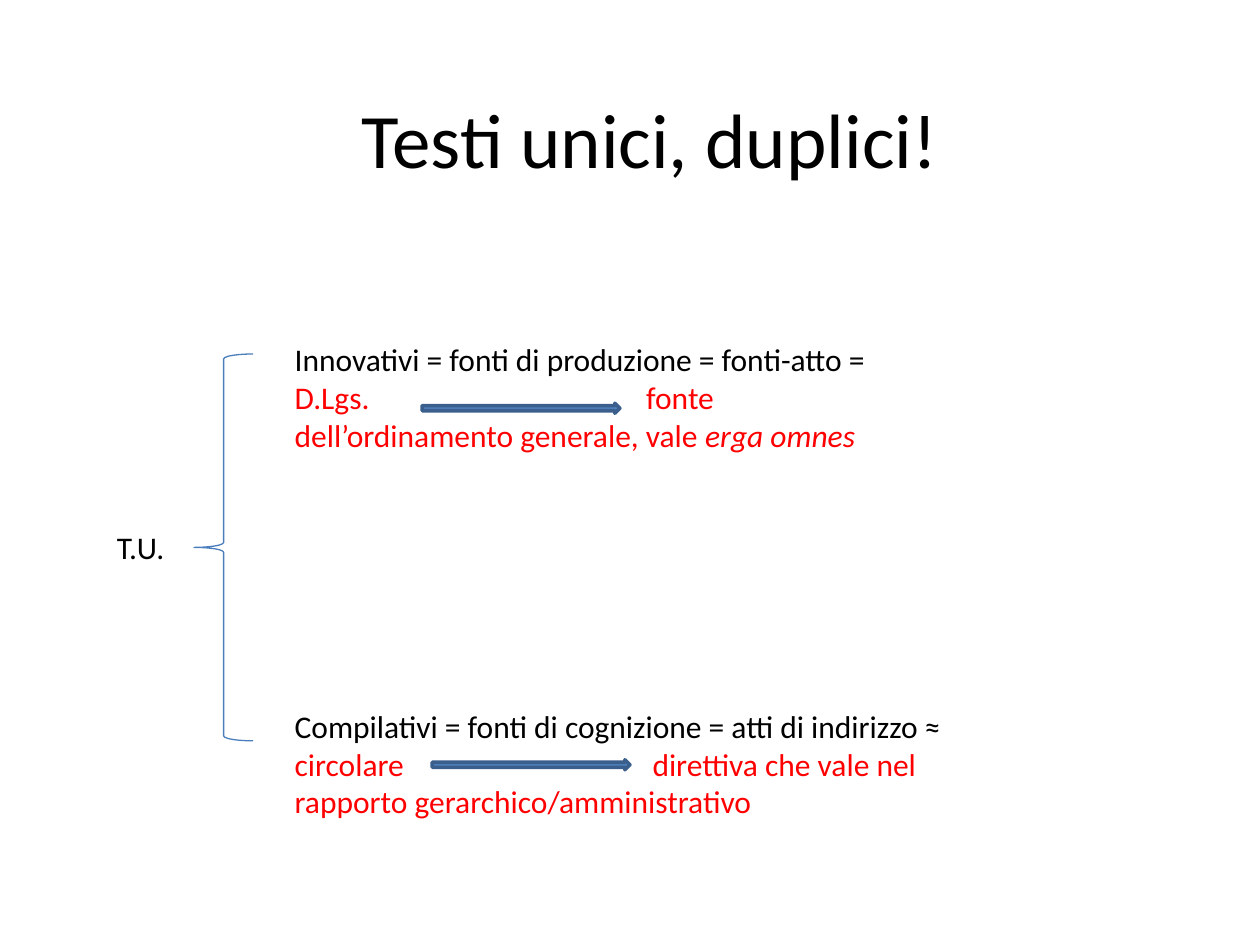
from pptx import Presentation
from pptx.dml.color import RGBColor
from pptx.enum.shapes import MSO_SHAPE
from pptx.enum.text import MSO_ANCHOR, PP_ALIGN
from pptx.util import Inches, Pt
from lxml.etree import SubElement
from pptx.oxml.ns import qn

COLS, ROWS = 100, 75
CELL = Inches(10) / COLS
BLACK, RED = "000000", "FF0000"
BLUE, NAVY, SKY = "4F81BD", "3A5F8C", "4B7EBC"


def paint(color, code):
    color.rgb = RGBColor.from_string(code)


def place(*cells):
    return [round(cell * CELL) for cell in cells]


def add_text(slide, box, parts, size=18, tab=None):
    frame = slide.shapes.add_textbox(*place(*box)).text_frame
    frame.word_wrap = True
    para = frame.paragraphs[0]
    for text, code, slant in parts:
        run = para.add_run()
        run.text = text
        run.font.name = "Calibri"
        run.font.size = Pt(size)
        run.font.italic = slant
        paint(run.font.color, code)
    if tab:
        stops = SubElement(para._p.get_or_add_pPr(), qn("a:tabLst"))
        SubElement(stops, qn("a:tab"), pos=str(place(tab)[0]), algn="l")
    return frame


def add_title(slide, box, text):
    frame = add_text(slide, box, [(text, BLACK, False)], 44)
    frame.vertical_anchor = MSO_ANCHOR.MIDDLE
    frame.paragraphs[0].alignment = PP_ALIGN.CENTER


def add_form(slide, kind, box, line, width, fill=None):
    form = slide.shapes.add_shape(kind, *place(*box))
    form.shadow.inherit = False
    paint(form.line.color, line)
    form.line.width = Pt(width)
    if fill:
        form.fill.solid()
        paint(form.fill.fore_color, fill)
    else:
        form.fill.background()


def main():
    deck = Presentation()
    deck.slide_width, deck.slide_height = place(COLS, ROWS)
    slide = deck.slides.add_slide(deck.slide_layouts[6])

    add_title(slide, (9.1, 2.9, 85, 16.1), "Testi unici, duplici!")
    add_text(slide, (8.3, 41.4, 17.3, 4), [("T.U.", BLACK, False)])
    add_form(slide, MSO_SHAPE.LEFT_BRACE, (15.4, 28.1, 4.7, 30.7), SKY, 0.75)

    add_text(slide, (22.4, 26.5, 48.8, 10.1), [
        ("Innovativi = fonti di produzione = fonti-atto = ", BLACK, False),
        ("D.Lgs.\tfonte dell’ordinamento generale, vale ", RED, False),
        ("erga omnes", RED, True),
    ], tab=27.9)
    add_text(slide, (22.4, 55.6, 55.1, 10.1), [
        ("Compilativi = fonti di cognizione = atti di indirizzo ≈ ", BLACK, False),
        ("circolare\tdirettiva che vale nel rapporto "
         "gerarchico/amministrativo", RED, False),
    ], tab=28.4)

    for left, top in ((33.5, 32), (34.3, 60.3)):
        add_form(slide, MSO_SHAPE.RIGHT_ARROW, (left, top, 15.7, 0.8),
                 NAVY, 2, BLUE)

    deck.save("out.pptx")


if __name__ == "__main__":
    main()
